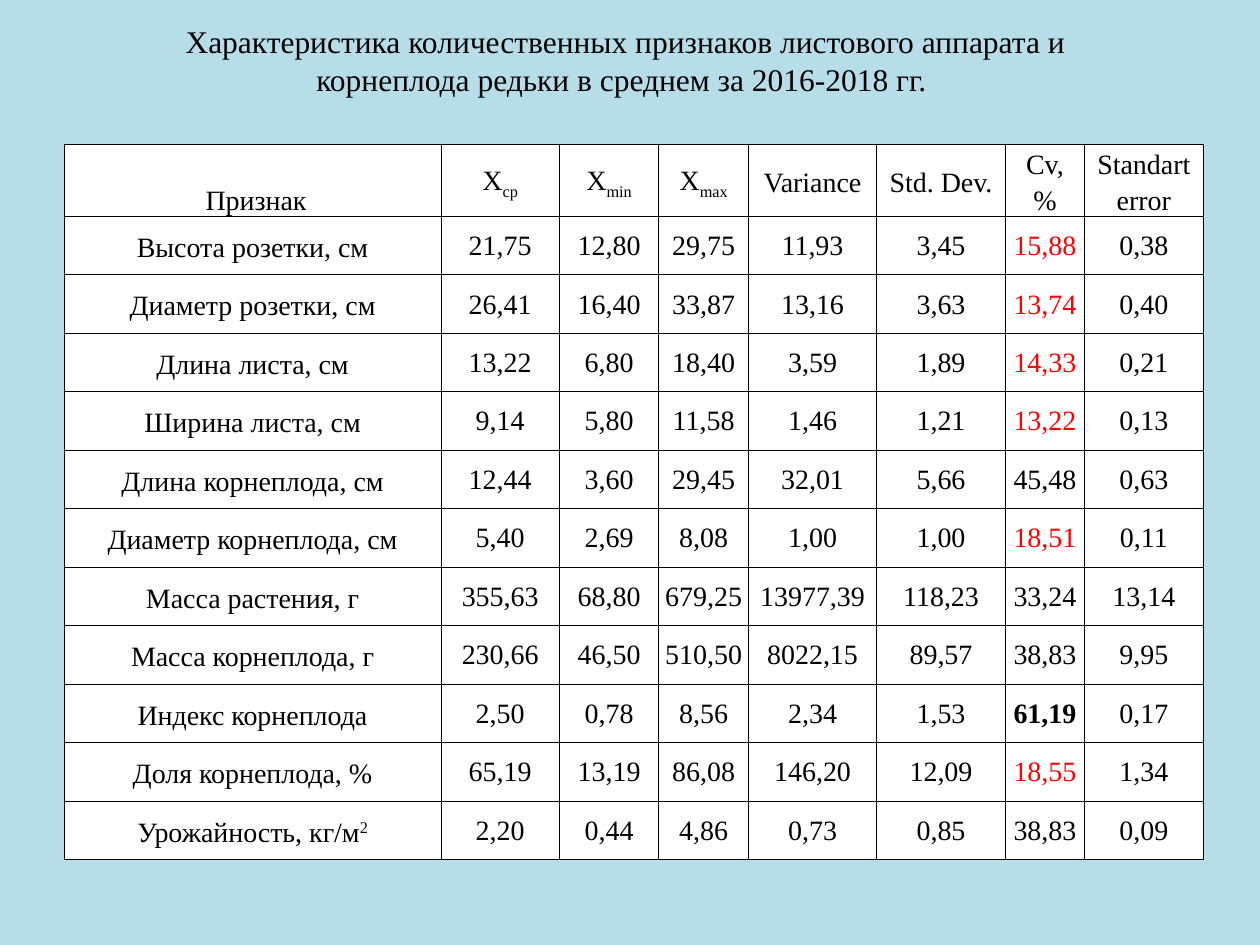
from lxml import etree
from pptx import Presentation
from pptx import util as u
from pptx.dml.color import RGBColor
from pptx.enum import text
from pptx.oxml import ns

SKY = RGBColor(0xB7, 0xDE, 0xE8)
WHITE = RGBColor(0xFF, 0xFF, 0xFF)
BLACK = RGBColor(0, 0, 0)
RED = RGBColor(0xFF, 0, 0)

WIDTH, HEIGHT = 10, 7.5
COLUMN_WIDTHS = [2.99, 0.94, 0.79, 0.71, 1.02, 1.02, 0.63, 0.94]
HEADER_HEIGHT, BODY_HEIGHT = 0.31, 5.11
CV = 6  # column of the coefficient of variation
LOW_CV = 20
WIDE_INSETS = (0.07, 0, 0.07, 0)
TIGHT_INSETS = (0.01, 0.01, 0.01, 0)

TITLE = ("Характеристика количественных признаков листового аппарата и "
         "корнеплода редьки в среднем за 2016-2018 гг. ")
# "_" starts a subscript, "^" a superscript
HEADINGS = [" Признак", "X_ср", "X_min", "X_max", "Variance", "Std. Dev.",
            "Cv, %", "Standart error"]
TRAITS = [
    ("Высота розетки, см", "21,75 12,80 29,75 11,93 3,45 15,88 0,38"),
    ("Диаметр розетки, см", "26,41 16,40 33,87 13,16 3,63 13,74 0,40"),
    ("Длина листа, см", "13,22 6,80 18,40 3,59 1,89 14,33 0,21"),
    ("Ширина листа, см", "9,14 5,80 11,58 1,46 1,21 13,22 0,13"),
    ("Длина корнеплода, см", "12,44 3,60 29,45 32,01 5,66 45,48 0,63"),
    ("Диаметр корнеплода, см", "5,40 2,69 8,08 1,00 1,00 18,51 0,11"),
    ("Масса растения, г", "355,63 68,80 679,25 13977,39 118,23 33,24 13,14"),
    ("Масса корнеплода, г", "230,66 46,50 510,50 8022,15 89,57 38,83 9,95"),
    ("Индекс корнеплода", "2,50 0,78 8,56 2,34 1,53 61,19 0,17"),
    ("Доля корнеплода, %", "65,19 13,19 86,08 146,20 12,09 18,55 1,34"),
    ("Урожайность, кг/м^2", "2,20 0,44 4,86 0,73 0,85 38,83 0,09"),
]


def number(value):
    return float(value.replace(",", "."))


def write(frame, content, size=16, color=BLACK, bold=False, spacing=None,
          font="Times New Roman"):
    """Fill a text frame, raising what follows "^" and lowering what follows "_"."""
    paragraph = frame.paragraphs[0]
    paragraph.alignment = text.PP_ALIGN.CENTER
    if spacing:
        paragraph.line_spacing = spacing
    mark, baseline = ("^", 30000) if "^" in content else ("_", -25000)
    base, _, script = content.partition(mark)
    for part, offset in ((base, 0), (script, baseline)):
        if not part:
            continue
        run = paragraph.add_run()
        run.text = part
        run.font.name, run.font.size = font, u.Pt(size)
        run.font.bold, run.font.color.rgb = bold, color
        if offset:
            run.font._element.set("baseline", str(offset))


class Deck:
    def __init__(self):
        self.file = Presentation()
        self.file.slide_width = u.Inches(WIDTH)
        self.file.slide_height = u.Inches(HEIGHT)
        self.slide = self.file.slides.add_slide(self.file.slide_layouts[6])
        self.slide.background.fill.solid()
        self.slide.background.fill.fore_color.rgb = SKY

    def place(self, left, top, width, height):
        """Turn shares of the slide's size into lengths."""
        return [u.Inches(share * side) for share, side in
                zip((left, top, width, height), (WIDTH, HEIGHT) * 2)]

    def title(self, content, *box):
        frame = self.slide.shapes.add_textbox(*self.place(*box)).text_frame
        frame.word_wrap = True
        write(frame, content, size=18)

    def table(self, rows, *box):
        table = self.slide.shapes.add_table(
            len(rows), len(COLUMN_WIDTHS), *self.place(*box)).table
        table.first_row = table.horz_banding = False
        for column, width in zip(table.columns, COLUMN_WIDTHS):
            column.width = u.Inches(width)
        for index, row in enumerate(table.rows):
            row.height = u.Inches(BODY_HEIGHT / (len(rows) - 1) if index
                                  else HEADER_HEIGHT)
        return table

    def cell(self, cell, content, insets=TIGHT_INSETS,
             anchor=text.MSO_ANCHOR.MIDDLE, **style):
        (cell.margin_left, cell.margin_top, cell.margin_right,
         cell.margin_bottom) = map(u.Inches, insets)
        cell.vertical_anchor = anchor
        self.border(cell)
        cell.fill.solid()
        cell.fill.fore_color.rgb = WHITE
        write(cell.text_frame, content, **style)

    def border(self, cell, points=0.5, color=BLACK):
        properties = cell._tc.get_or_add_tcPr()
        for side in "LRTB":
            line = etree.SubElement(properties, ns.qn(f"a:ln{side}"),
                                    w=str(u.Pt(points)))
            fill = etree.SubElement(line, ns.qn("a:solidFill"))
            etree.SubElement(fill, ns.qn("a:srgbClr"), val=str(color))


def main():
    deck = Deck()
    rows = [HEADINGS] + [[trait, *values.split()] for trait, values in TRAITS]
    highest_cv = max(number(row[CV]) for row in rows[1:])
    table = deck.table(rows, 0.051, 0.153, 0.906, 0.72)
    for r, row in enumerate(rows):
        for c, content in enumerate(row):
            style = {}
            if r == c == 0:
                style = dict(anchor=text.MSO_ANCHOR.BOTTOM)
            elif r == 0 or c == 0:
                style = dict(insets=WIDE_INSETS, spacing=1.15)
            elif c == CV:
                cv = number(content)
                style = dict(color=RED if cv < LOW_CV else BLACK,
                             bold=cv == highest_cv)
            deck.cell(table.cell(r, c), content, **style)
    deck.title(TITLE, 0.083, 0.017, 0.827, 0.095)
    deck.file.save("out.pptx")


if __name__ == "__main__":
    main()
